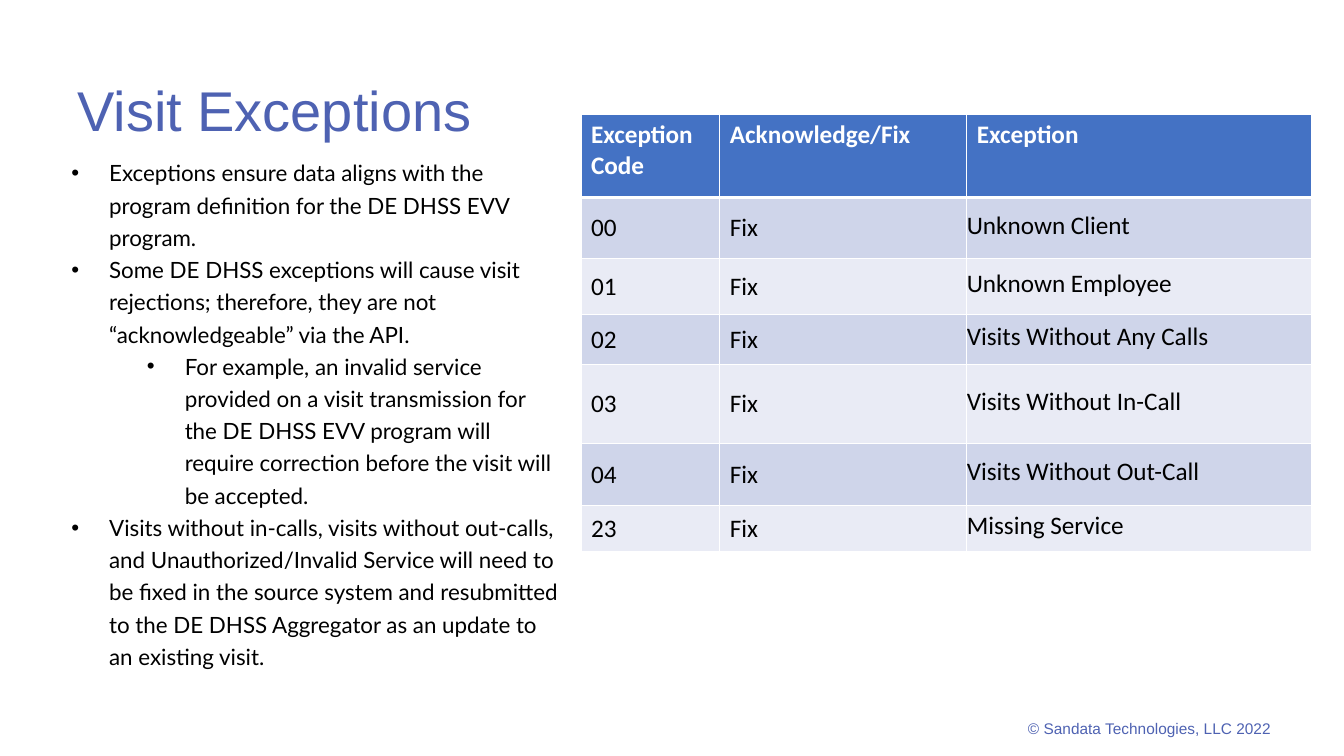
from dataclasses import dataclass

from lxml import etree
from pptx import Presentation
from pptx import util as u
from pptx.dml.color import RGBColor
from pptx.enum import text
from pptx.oxml import ns

BLUE = RGBColor(0x4E, 0x62, 0xB2)
BLACK = RGBColor(0, 0, 0)
WHITE = RGBColor(0xFF, 0xFF, 0xFF)
HEAD = RGBColor(0x44, 0x72, 0xC4)
BANDS = (RGBColor(0xCF, 0xD5, 0xEA), RGBColor(0xE9, 0xEB, 0xF5))


@dataclass(frozen=True)
class Style:
    face: str
    size: float
    color: RGBColor
    bold: bool = False


@dataclass(frozen=True)
class Box:
    left: float
    top: float
    width: float
    height: float


@dataclass(frozen=True)
class Bullet:
    words: str
    indent: float = 27


TITLE = Style("Arial", 40, BLUE)
BODY = Style("Lato", 16, BLACK)
FOOT = Style("Arial", 11, BLUE)
HEADER = Style("Calibri", 18, WHITE, True)
ENTRY = Style("Calibri", 18, BLACK)

HANG = 27
POINTS = (
    Bullet("Exceptions ensure data aligns with the program definition for the "
           "DE DHSS EVV program."),
    Bullet("Some DE DHSS exceptions will cause visit rejections; therefore, "
           "they are not “acknowledgeable” via the API."),
    Bullet("For example, an invalid service provided on a visit transmission "
           "for the DE DHSS EVV program will require correction before the "
           "visit will be accepted.", 81),
    Bullet("Visits without in-calls, visits without out-calls, and "
           "Unauthorized/Invalid Service will need to be fixed in the source "
           "system and resubmitted to the DE DHSS Aggregator as an update to "
           "an existing visit."),
)

COLS = (99.2, 176.4, 246)
ROWS = (59, 43.9, 39.6, 36, 56.2, 44.6, 32.4)
TABLE = (
    ("Exception Code", "Acknowledge/Fix", "Exception"),
    ("00", "Fix", "Unknown Client"),
    ("01", "Fix", "Unknown Employee"),
    ("02", "Fix", "Visits Without Any Calls"),
    ("03", "Fix", "Visits Without In-Call"),
    ("04", "Fix", "Visits Without Out-Call"),
    ("23", "Fix", "Missing Service"),
)


def add_run(para, words: str, style: Style) -> None:
    run = para.add_run()
    run.text = words
    font = run.font
    font.name = style.face
    font.size = u.Pt(style.size)
    font.bold = style.bold
    font.color.rgb = style.color


def add_box(slide, box: Box, anchor=text.MSO_ANCHOR.TOP):
    """Add an empty wrapping text box and return its frame."""
    shape = slide.shapes.add_textbox(
        u.Pt(box.left), u.Pt(box.top), u.Pt(box.width), u.Pt(box.height))
    frame = shape.text_frame
    frame.word_wrap = True
    frame.vertical_anchor = anchor
    return frame


def add_bullets(frame, items: tuple[Bullet, ...]) -> None:
    for i, item in enumerate(items):
        para = frame.add_paragraph() if i else frame.paragraphs[0]
        props = para._p.get_or_add_pPr()
        props.set("marL", str(u.Pt(item.indent)))
        props.set("indent", str(u.Pt(-HANG)))
        etree.SubElement(props, ns.qn("a:buFont"), typeface="Arial")
        etree.SubElement(props, ns.qn("a:buChar"), char="•")
        para.level = int(item.indent > HANG)
        para.line_spacing = 1.2
        add_run(para, item.words, BODY)


def add_edge(cell, side: str, width: float) -> None:
    """Draw one white cell border; call before setting the fill."""
    line = etree.SubElement(cell._tc.get_or_add_tcPr(), ns.qn(f"a:ln{side}"),
                            w=str(u.Pt(width)))
    fill = etree.SubElement(line, ns.qn("a:solidFill"))
    etree.SubElement(fill, ns.qn("a:srgbClr"), val=str(WHITE))


def fill_cell(cell, words: str, row: int, col: int) -> None:
    if row:
        cell.vertical_anchor = text.MSO_ANCHOR.MIDDLE
        if col == 2:
            cell.margin_left = cell.margin_right = cell.margin_top = u.Pt(0)
    thick = {0: "B", 1: "T"}.get(row)
    for side in "LRTB":
        add_edge(cell, side, 3 if side == thick else 1)
    cell.fill.solid()
    cell.fill.fore_color.rgb = BANDS[(row - 1) % 2] if row else HEAD
    add_run(cell.text_frame.paragraphs[0], words, ENTRY if row else HEADER)


def add_table(slide, left: float, top: float) -> None:
    table = slide.shapes.add_table(
        len(ROWS), len(COLS), u.Pt(left), u.Pt(top),
        u.Pt(sum(COLS)), u.Pt(sum(ROWS))).table
    for col, width in zip(table.columns, COLS):
        col.width = u.Pt(width)
    for row, height in zip(table.rows, ROWS):
        row.height = u.Pt(height)
    for r, line in enumerate(TABLE):
        for c, words in enumerate(line):
            fill_cell(table.cell(r, c), words, r, c)


def main() -> None:
    deck = Presentation()
    deck.slide_width, deck.slide_height = u.Pt(960), u.Pt(540)
    slide = deck.slides.add_slide(deck.slide_layouts[6])

    title = add_box(slide, Box(48.2, 55.4, 789, 51.8),
                    text.MSO_ANCHOR.MIDDLE).paragraphs[0]
    title.line_spacing = 0.9
    add_run(title, "Visit Exceptions", TITLE)

    add_bullets(add_box(slide, Box(43.9, 106.6, 362.9, 343.4)), POINTS)

    foot = add_box(slide, Box(501, 500.4, 414, 39.6),
                   text.MSO_ANCHOR.MIDDLE).paragraphs[0]
    foot.alignment = text.PP_ALIGN.RIGHT
    add_run(foot, "© Sandata Technologies, LLC 2022", FOOT)

    add_table(slide, 415, 82)
    deck.save("out.pptx")


if __name__ == "__main__":
    main()
